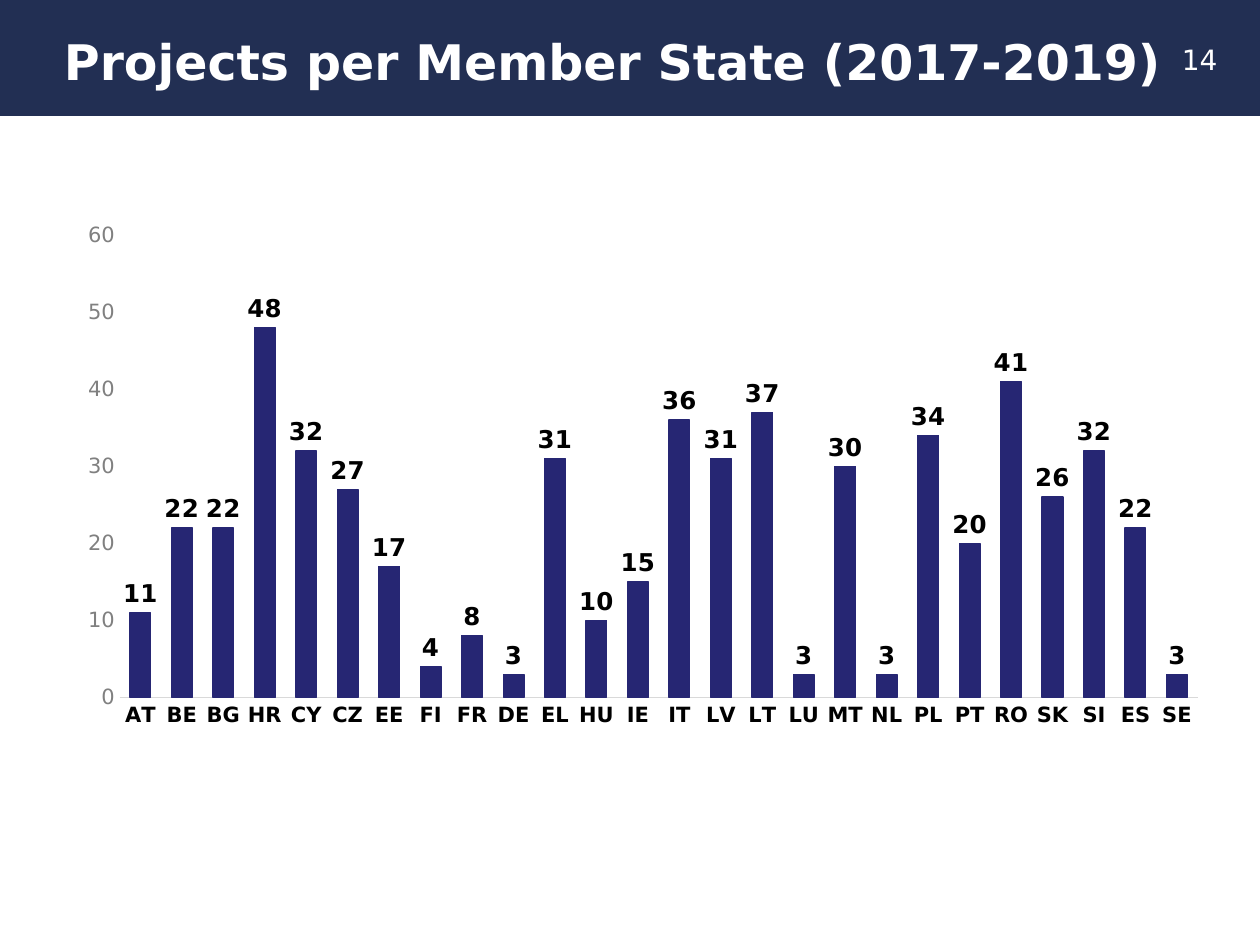
from dataclasses import dataclass

from lxml.etree import SubElement
from pptx import Presentation
from pptx.chart.data import CategoryChartData
from pptx.dml.color import RGBColor
from pptx.enum.chart import XL_CHART_TYPE, XL_LABEL_POSITION, XL_TICK_MARK
from pptx.enum.shapes import MSO_SHAPE
from pptx.enum.text import MSO_ANCHOR, PP_ALIGN
from pptx.oxml.ns import qn
from pptx.slide import Slide
from pptx.util import Inches, Pt


@dataclass(frozen=True)
class Theme:
    font: str = "DejaVu Sans"
    band: str = "222F53"
    bar: str = "262673"
    white: str = "FFFFFF"
    black: str = "000000"
    gray: str = "808080"
    rule: str = "D9D9D9"
    title: int = 28
    page: int = 16
    label: int = 14
    axis: int = 12
    base: int = 10


@dataclass(frozen=True)
class Label:
    text: str
    box: tuple[float, float, float, float]
    size: int
    bold: bool = False
    align: PP_ALIGN = PP_ALIGN.LEFT
    anchor: MSO_ANCHOR = MSO_ANCHOR.TOP
    hang: float = 0


THEME = Theme()
LABELS = [
    Label("14", (8.66, 0.29, 1.1, 0.37), THEME.page, align=PP_ALIGN.RIGHT),
    Label("Projects per Member State (2017-2019)", (0.41, -0.03, 9, 1.02),
          THEME.title, bold=True, anchor=MSO_ANCHOR.MIDDLE, hang=0.39),
]
STATES = {
    "AT": 11, "BE": 22, "BG": 22, "HR": 48, "CY": 32, "CZ": 27, "EE": 17,
    "FI": 4, "FR": 8, "DE": 3, "EL": 31, "HU": 10, "IE": 15, "IT": 36,
    "LV": 31, "LT": 37, "LU": 3, "MT": 30, "NL": 3, "PL": 34, "PT": 20,
    "RO": 41, "SK": 26, "SI": 32, "ES": 22, "SE": 3,
}
# Inner plot area as shares of the chart frame
PLOT = {"x": 0.05, "y": 0.04, "w": 0.93, "h": 0.88}


def style(font, size: int, color: str, bold: bool = False) -> None:
    font.name = THEME.font
    font.size = Pt(size)
    font.bold = bold
    font.color.rgb = RGBColor.from_string(color)


def paint(fill, color: str) -> None:
    fill.solid()
    fill.fore_color.rgb = RGBColor.from_string(color)


def add_band(slide: Slide) -> None:
    band = slide.shapes.add_shape(
        MSO_SHAPE.RECTANGLE, 0, 0, Inches(10), Inches(0.92))
    band.shadow.inherit = False
    paint(band.fill, THEME.band)
    band.line.fill.background()


def add_label(slide: Slide, label: Label) -> None:
    frame = slide.shapes.add_textbox(*map(Inches, label.box)).text_frame
    frame.word_wrap = True
    frame.vertical_anchor = label.anchor
    para = frame.paragraphs[0]
    para.alignment = label.align
    if label.hang:
        props = para._p.get_or_add_pPr()
        props.set("marL", str(Inches(label.hang)))
        props.set("indent", str(Inches(-label.hang)))
    run = para.add_run()
    run.text = label.text
    style(run.font, label.size, THEME.white, label.bold)


def place_plot(chart) -> None:
    area = chart._chartSpace.chart.plotArea
    old = area.find(qn("c:layout"))
    if old is not None:
        area.remove(old)
    layout = SubElement(area, qn("c:layout"))
    area.insert(0, layout)
    manual = SubElement(layout, qn("c:manualLayout"))
    parts = {"layoutTarget": "inner", "xMode": "edge", "yMode": "edge", **PLOT}
    for tag, val in parts.items():
        SubElement(manual, qn(f"c:{tag}")).set("val", str(val))


def add_bars(slide: Slide) -> None:
    data = CategoryChartData()
    data.categories = list(STATES)
    data.add_series("Series 1", list(STATES.values()))
    box = map(Inches, (0.49, 1.7, 9.2, 4.17))
    chart = slide.shapes.add_chart(
        XL_CHART_TYPE.COLUMN_CLUSTERED, *box, data).chart
    style(chart.font, THEME.base, THEME.black)
    chart.has_legend = False
    chart.has_title = False
    place_plot(chart)

    # Axes
    cat, val = chart.category_axis, chart.value_axis
    for axis, color, bold in ((cat, THEME.black, True),
                              (val, THEME.gray, False)):
        axis.has_major_gridlines = False
        axis.major_tick_mark = axis.minor_tick_mark = XL_TICK_MARK.NONE
        style(axis.tick_labels.font, THEME.axis, color, bold)
    paint(cat.format.line.fill, THEME.rule)
    cat.format.line.width = Pt(0.75)
    val.format.line.fill.background()
    val.minimum_scale, val.maximum_scale, val.major_unit = 0, 60, 10

    # Columns and their values
    plot = chart.plots[0]
    plot.gap_width, plot.overlap = 100, -24
    plot.vary_by_categories = False
    bars = plot.series[0]
    paint(bars.format.fill, THEME.bar)
    paint(bars.format.line.fill, THEME.bar)
    bars.format.line.width = Pt(0.75)
    labels = bars.data_labels
    labels.show_value = True
    labels.position = XL_LABEL_POSITION.OUTSIDE_END
    style(labels.font, THEME.label, THEME.black, bold=True)


def main() -> None:
    deck = Presentation()
    deck.slide_width, deck.slide_height = Inches(10), Inches(7.5)
    slide = deck.slides.add_slide(deck.slide_layouts[6])
    paint(slide.background.fill, THEME.white)
    add_band(slide)
    for label in LABELS:
        add_label(slide, label)
    add_bars(slide)
    deck.save("out.pptx")


if __name__ == "__main__":
    main()
